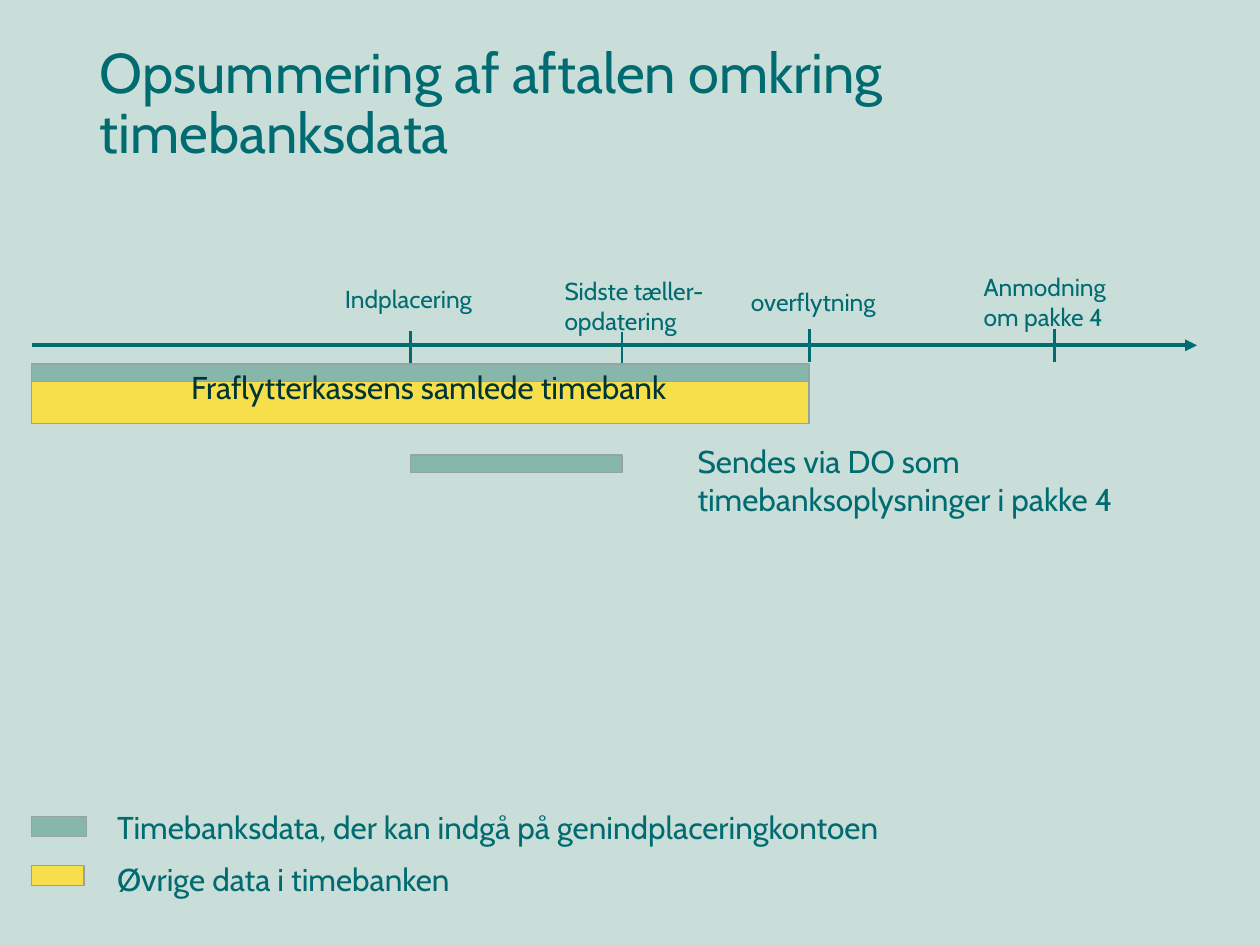
from lxml import etree
from pptx import Presentation
from pptx.dml.color import RGBColor
from pptx.enum import shapes as sh, text as tx
from pptx.oxml import ns
from pptx.util import Pt

TEAL, DARK, GREEN, GOLD, EDGE = "006B70", "003538", "87B6AB", "F6DF4B", "95A4A1"


def hue(code):
    return RGBColor.from_string(code)


def write(frame, words, size=18, color=TEAL, lead=None, gap=0, anchor="TOP"):
    frame.word_wrap = True
    frame.auto_size = tx.MSO_AUTO_SIZE.NONE
    frame.vertical_anchor = getattr(tx.MSO_ANCHOR, anchor)
    for i, line in enumerate(words.split("\n")):
        para = frame.add_paragraph() if i else frame.paragraphs[0]
        para.alignment = tx.PP_ALIGN.LEFT
        para.space_before = Pt(gap if i else 0)
        if lead:
            para.line_spacing = lead
        run = para.add_run()
        run.text = line
        run.font.name, run.font.size = "Cabin", Pt(size)
        run.font.color.rgb = hue(color)


def label(slide, box, words, **style):
    area = slide.shapes.add_textbox(*map(Pt, box))
    write(area.text_frame, words, **style)


def bar(slide, box, color):
    rect = slide.shapes.add_shape(sh.MSO_SHAPE.RECTANGLE, *map(Pt, box))
    rect.shadow.inherit = False
    rect.fill.solid()
    rect.fill.fore_color.rgb = hue(color)
    rect.line.color.rgb = hue(EDGE)
    rect.line.width = Pt(1)


def rule(slide, start, end, width, arrow=False):
    line = slide.shapes.add_connector(
        sh.MSO_CONNECTOR.STRAIGHT, *map(Pt, start + end))
    line.line.color.rgb = hue(TEAL)
    line.line.width = Pt(width)
    if arrow:
        etree.SubElement(line.line._get_or_add_ln(), ns.qn("a:tailEnd"),
                         type="triangle")
    etree.SubElement(line._element.spPr, ns.qn("a:effectLst"))


def heading(slide, box, words):
    title = slide.shapes.title
    title.left, title.top, title.width, title.height = map(Pt, box)
    write(title.text_frame, words, size=32, lead=0.9, anchor="MIDDLE")


def timeline(slide, box, marks):
    left, top, wide, high = box
    axis = top + high
    rule(slide, (left, axis), (left + wide, axis), 2.25, arrow=True)
    for tick, rise, x, y, w, h, words in marks:
        label(slide, (left + x, top + y, w, h), words, size=14)
        rule(slide, (left + tick, axis - rise),
             (left + tick, axis - rise + 19.2), 1.5)


def bank(slide, box):
    left, top, wide, high = box
    bar(slide, (left, top, wide, 11.5), GREEN)
    bar(slide, (left, top + 10, wide, high - 10), GOLD)
    label(slide, (left + 84.2, top - 1.4, 354, 28.8),
          "Fraflytterkassens samlede timebank", color=DARK)


def sent(slide, box):
    left, top, wide, high = box
    bar(slide, (left, top + 10.6, 121, 10.3), GREEN)
    label(slide, (left + 157, top, wide - 157, high),
          "Sendes via DO som timebanksoplysninger i pakke 4")


def legend(slide, box, items):
    left, top, wide, high = box
    for i, (color, key, words) in enumerate(items):
        bar(slide, (left, top + 5.8 + 28 * i, key, 11.5), color)
    label(slide, (left + 41.8, top, wide - 41.8, high),
          "\n".join(item[2] for item in items), lead=0.9, gap=10)


def main():
    deck = Presentation()
    deck.slide_width, deck.slide_height = Pt(720), Pt(540)
    slide = deck.slides.add_slide(deck.slide_layouts[5])
    slide.background.fill.solid()
    slide.background.fill.fore_color.rgb = hue("C9DED9")
    heading(slide, (49.7, 7.9, 468, 104.4),
            "Opsummering af aftalen omkring timebanksdata")
    timeline(slide, (18, 152, 666, 45.3), [
        (216.5, 8.3, 172, 7, 89, 24.2, "Indplacering"),
        (337.5, 7.5, 297.5, 2.3, 106.5, 41.2, "Sidste tæller-opdatering"),
        (444.5, 9.4, 404, 8.6, 89, 24.2, "overflytning"),
        (584.5, 9.4, 537, 0, 89, 41.2, "Anmodning om pakke 4"),
    ])
    bank(slide, (18, 208, 444.5, 34))
    sent(slide, (234.5, 249.2, 416.5, 51))
    legend(slide, (18, 460.8, 499, 68.4), [
        (GREEN, 31.5, "Timebanksdata, der kan indgå på genindplaceringkontoen"),
        (GOLD, 30.2, "Øvrige data i timebanken"),
    ])
    deck.save("out.pptx")


if __name__ == "__main__":
    main()
